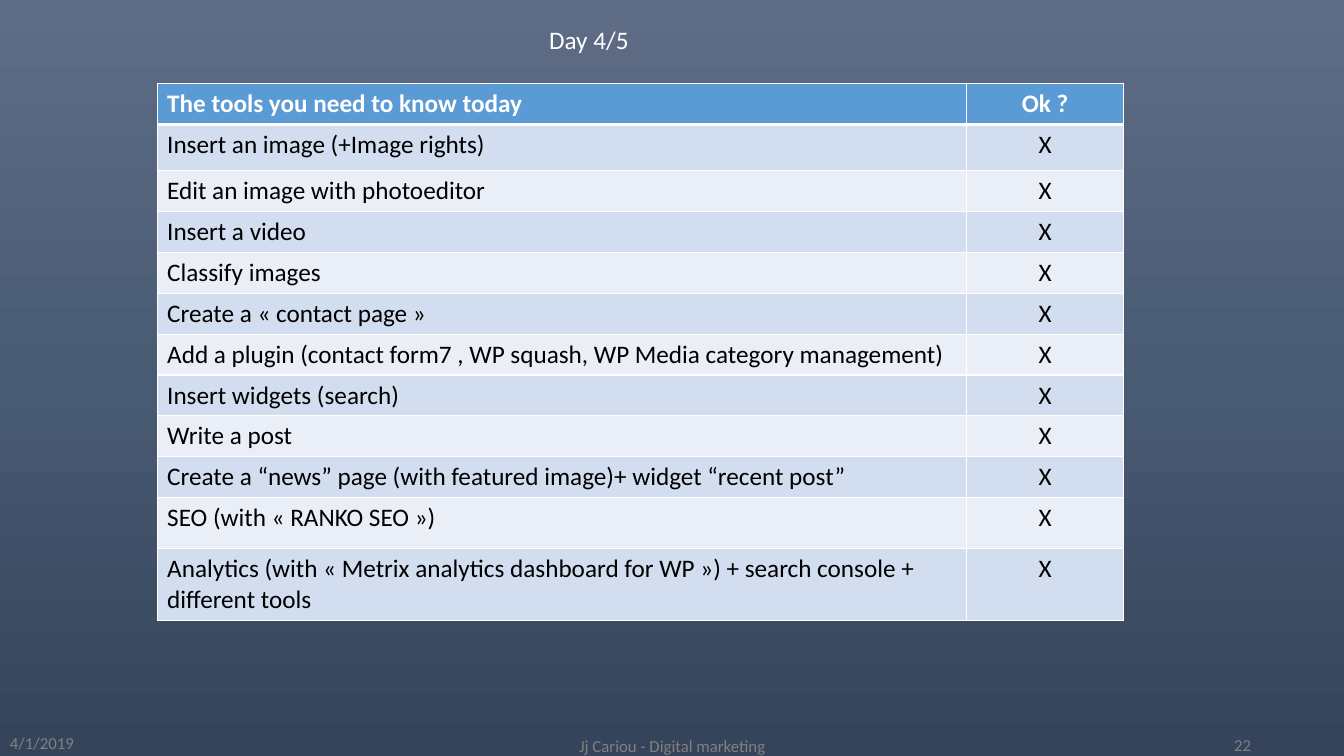
from copy import deepcopy

from lxml import etree
from pptx import Presentation
from pptx.dml.color import RGBColor
from pptx.enum.text import MSO_ANCHOR, MSO_AUTO_SIZE, PP_ALIGN
from pptx.oxml.ns import qn
from pptx.util import Cm, Pt

LEFT, CENTER, RIGHT = PP_ALIGN.LEFT, PP_ALIGN.CENTER, PP_ALIGN.RIGHT
TOP, MIDDLE = MSO_ANCHOR.TOP, MSO_ANCHOR.MIDDLE
FIT_SHAPE = MSO_AUTO_SIZE.SHAPE_TO_FIT_TEXT

WHITE = RGBColor(0xFF, 0xFF, 0xFF)
BLACK = RGBColor(0x00, 0x00, 0x00)
GREY = RGBColor(0x80, 0x80, 0x80)
HEADER_BLUE = RGBColor(0x5B, 0x9B, 0xD5)
BANDS = (RGBColor(0xD2, 0xDE, 0xEF), RGBColor(0xEA, 0xEF, 0xF7))
BACKGROUND_STOPS = (
    (0, RGBColor(0x5E, 0x6D, 0x85)),
    (0.5, RGBColor(0x49, 0x5A, 0x73)),
    (1, RGBColor(0x35, 0x44, 0x5A)),
)

FONT = "Calibri"
HEADER_FORMAT = {"name": FONT, "size": Pt(18), "bold": True}
BODY_FORMAT = {"name": FONT, "size": Pt(18), "bold": False}
FOOTER_FORMAT = {"name": FONT, "size": Pt(12)}

HEADINGS = ("The tools you need to know today", "Ok ?")
TOOLS = (
    "Insert an image (+Image rights)",
    "Edit an image with photoeditor",
    "Insert a video",
    "Classify images",
    "Create a « contact page »",
    "Add a plugin (contact form7 , WP squash, WP Media category management)",
    "Insert widgets (search)",
    "Write a post",
    "Create a “news” page (with featured image)+ widget “recent post”",
    "SEO (with « RANKO SEO »)",
    "Analytics (with « Metrix analytics dashboard for WP ») + search console + different tools",
)
COLUMN_WIDTHS = (20.4, 3.96)
ROW_HEIGHTS = (1.03, 1.16) + (1.03,) * 8 + (1.29, 1.8)


def write(frame, text, values, color, alignment=LEFT):
    para = frame.paragraphs[0]
    para.alignment = alignment
    span = para.add_run()
    span.text = text
    for name, value in values.items():
        setattr(span.font, name, value)
    span.font.color.rgb = color


def add_label(page, box, text, values, color, alignment=LEFT, anchor=MIDDLE, wrap=True):
    frame = page.shapes.add_textbox(*(Cm(length) for length in box)).text_frame
    frame.word_wrap = wrap
    frame.vertical_anchor = anchor
    if not wrap:
        frame.auto_size = FIT_SHAPE
    write(frame, text, values, color, alignment)


def paint_background(page):
    fill = page.background.fill
    fill.gradient()
    fill.gradient_angle = 270
    stop_list = page.element.find(".//" + qn("a:gsLst"))
    stop_list.insert(1, deepcopy(stop_list[0]))
    for stop, (position, color) in zip(fill.gradient_stops, BACKGROUND_STOPS):
        stop.position = position
        stop.color.rgb = color


def set_borders(cell, widths):
    """Draw white cell borders; widths are points for left, right, top, bottom."""
    properties = cell._tc.get_or_add_tcPr()
    for index, (side, width) in enumerate(zip("LRTB", widths)):
        line = etree.Element(qn(f"a:ln{side}"), w=str(Pt(width)))
        fill = etree.SubElement(line, qn("a:solidFill"))
        etree.SubElement(fill, qn("a:srgbClr"), val=str(WHITE))
        properties.insert(index, line)


def add_checklist(page, left, top):
    rows = [HEADINGS] + [(tool, "X") for tool in TOOLS]
    table = page.shapes.add_table(
        len(rows), len(HEADINGS), Cm(left), Cm(top),
        Cm(sum(COLUMN_WIDTHS)), Cm(sum(ROW_HEIGHTS)),
    ).table
    for column, width in zip(table.columns, COLUMN_WIDTHS):
        column.width = Cm(width)
    for row_index, (texts, height) in enumerate(zip(rows, ROW_HEIGHTS)):
        table.rows[row_index].height = Cm(height)
        is_header = row_index == 0
        values, color = (HEADER_FORMAT, WHITE) if is_header else (BODY_FORMAT, BLACK)
        fill_color = HEADER_BLUE if is_header else BANDS[(row_index - 1) % 2]
        top_width = 3 if row_index == 1 else 1
        bottom_width = 3 if is_header else 1
        for column_index, (text, alignment) in enumerate(zip(texts, (LEFT, CENTER))):
            cell = table.cell(row_index, column_index)
            cell.fill.solid()
            cell.fill.fore_color.rgb = fill_color
            set_borders(cell, (1, 1, top_width, bottom_width))
            write(cell.text_frame, text, values, color, alignment)


def add_footer(page, top):
    add_label(page, (0, top, 3.25, 0.56), "4/1/2019", FOOTER_FORMAT, GREY)
    add_label(page, (11.23, top, 11.43, 0.71), "Jj Cariou - Digital marketing",
              FOOTER_FORMAT, GREY, CENTER)
    add_label(page, (26.85, top + 0.02, 4.93, 0.61), "22", FOOTER_FORMAT, GREY, RIGHT)


def main():
    deck = Presentation()
    deck.slide_width, deck.slide_height = Cm(33.87), Cm(19.05)
    page = deck.slides.add_slide(deck.slide_layouts[6])
    paint_background(page)
    add_footer(page, 18.44)
    add_checklist(page, 3.96, 2.11)
    add_label(page, (13.59, 0.48, 2.54, 1.02), "Day 4/5", BODY_FORMAT, WHITE,
              anchor=TOP, wrap=False)
    deck.save("out.pptx")


if __name__ == "__main__":
    main()
